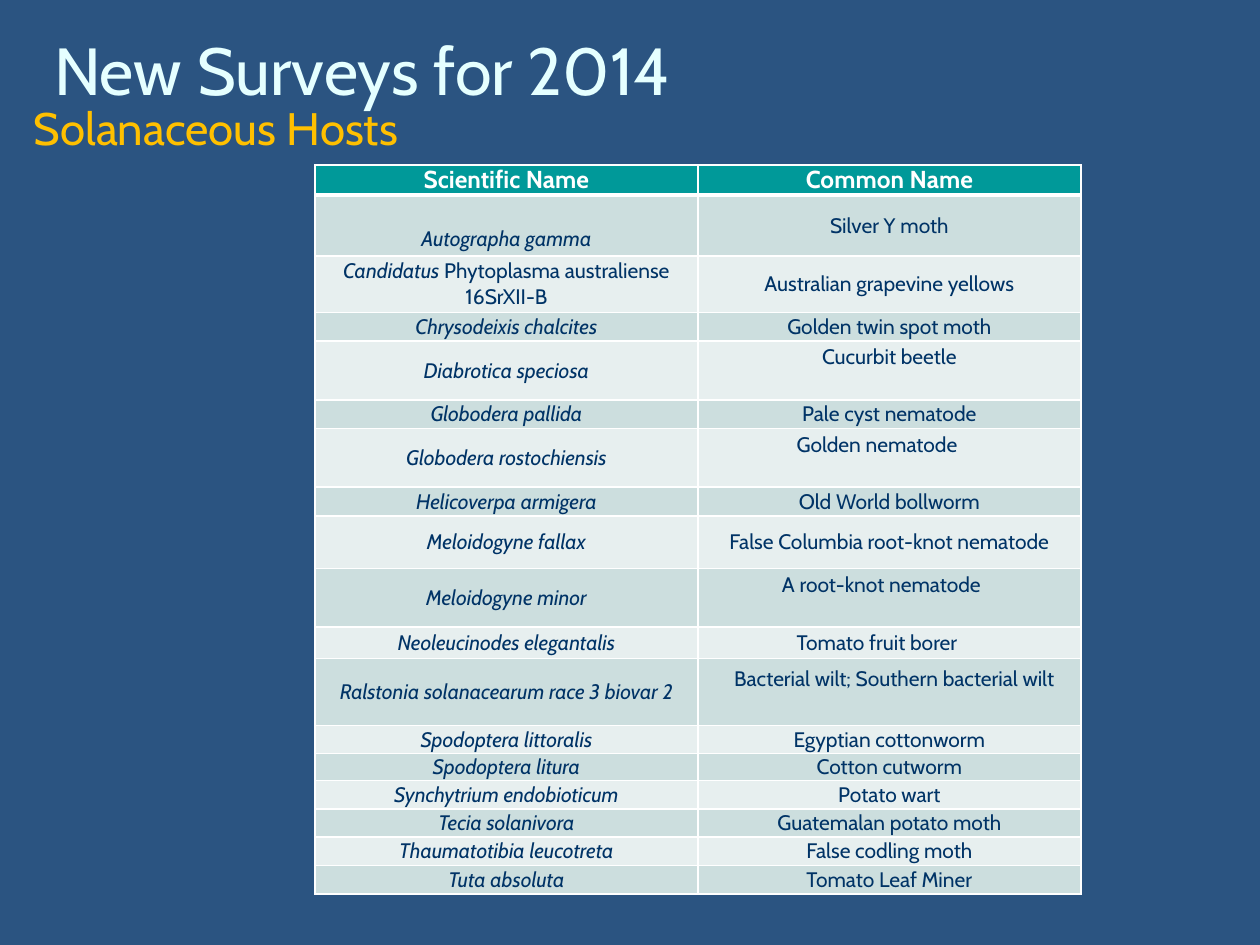
from dataclasses import dataclass

from lxml.etree import SubElement
from pptx import Presentation
from pptx.dml.color import RGBColor
from pptx.enum.text import MSO_ANCHOR, PP_ALIGN
from pptx.oxml.ns import qn
from pptx.util import Cm, Pt


@dataclass(frozen=True)
class Theme:
    font: str = "Cabin"
    background: str = "2B5481"
    title: str = "E5FFFF"
    subtitle: str = "FFC000"
    header: str = "009999"
    bands: tuple = ("CCDEDE", "E7EFEF")
    body: str = "003366"
    white: str = "FFFFFF"
    title_size: int = 38
    subtitle_size: int = 26
    header_size: int = 14
    body_size: int = 12
    rule: int = 1
    header_rule: int = 3


@dataclass(frozen=True)
class Pest:
    scientific: str
    common: str
    height: float
    plain: str = ""  # upright part after the italic name
    scientific_top: float = 0
    common_bottom: float = 0
    common_left: float = 0
    common_right: float = 0


LOWER = 0.53  # cell margin that moves text half a line

PESTS = [
    Pest("Autographa gamma", "Silver Y moth", 1.23, scientific_top=LOWER),
    Pest("Candidatus", "Australian grapevine yellows", 1.14,
         plain=" Phytoplasma australiense 16SrXII-B"),
    Pest("Chrysodeixis chalcites", "Golden twin spot moth", 0.58),
    Pest("Diabrotica speciosa", "Cucurbit beetle", 1.18, common_bottom=LOWER),
    Pest("Globodera pallida", "Pale cyst nematode", 0.58),
    Pest("Globodera rostochiensis", "Golden nematode", 1.18,
         common_bottom=LOWER, common_right=0.5),
    Pest("Helicoverpa armigera", "Old World bollworm", 0.58),
    Pest("Meloidogyne fallax", "False Columbia root-knot nematode", 1.06),
    Pest("Meloidogyne minor", "A root-knot nematode", 1.18,
         common_bottom=LOWER, common_right=0.32),
    Pest("Neoleucinodes elegantalis", "Tomato fruit borer", 0.64,
         common_right=0.5),
    Pest("Ralstonia solanacearum race 3 biovar 2",
         "Bacterial wilt; Southern bacterial wilt", 1.35,
         common_bottom=LOWER, common_left=0.2),
    Pest("Spodoptera littoralis", "Egyptian cottonworm", 0.56),
    Pest("Spodoptera litura", "Cotton cutworm", 0.55),
    Pest("Synchytrium endobioticum", "Potato wart", 0.57),
    Pest("Tecia solanivora", "Guatemalan potato moth", 0.57),
    Pest("Thaumatotibia leucotreta", "False codling moth", 0.57),
    Pest("Tuta absoluta", "Tomato Leaf Miner", 0.58),
]


class SlideBuilder:
    def __init__(self, page, theme):
        self.page = page
        self.theme = theme
        fill = page.background.fill
        fill.solid()
        fill.fore_color.rgb = RGBColor.from_string(theme.background)

    def style(self, font, size, color, bold=False):
        font.name = self.theme.font
        font.size = Pt(size)
        font.bold = bold
        font.color.rgb = RGBColor.from_string(color)

    def text(self, words, left, top, width, height, size, color,
             anchor=MSO_ANCHOR.TOP):
        box = self.page.shapes.add_textbox(
            Cm(left), Cm(top), Cm(width), Cm(height))
        frame = box.text_frame
        frame.word_wrap = True
        frame.vertical_anchor = anchor
        para = frame.paragraphs[0]
        para.text = words
        self.style(para.font, size, color)

    def borders(self, cell, top, bottom):
        properties = cell._tc.get_or_add_tcPr()
        rule = self.theme.rule
        for side, width in zip("LRTB", (rule, rule, top, bottom)):
            line = SubElement(properties, qn(f"a:ln{side}"), w=str(Pt(width)))
            solid = SubElement(line, qn("a:solidFill"))
            SubElement(solid, qn("a:srgbClr"), val=self.theme.white)

    def cell(self, cell, spans, fill, size, color, bold=False,
             margins=(0, 0, 0, 0), rules=(1, 1)):
        """Fill a cell; spans are (words, italic), margins left/top/right/bottom."""
        self.borders(cell, *rules)
        cell.fill.solid()
        cell.fill.fore_color.rgb = RGBColor.from_string(fill)
        cell.vertical_anchor = MSO_ANCHOR.MIDDLE
        (cell.margin_left, cell.margin_top,
         cell.margin_right, cell.margin_bottom) = map(Cm, margins)
        para = cell.text_frame.paragraphs[0]
        para.alignment = PP_ALIGN.CENTER
        self.style(para.font, size, color, bold)
        for words, italic in spans:
            span = para.add_run()
            span.text = words
            self.style(span.font, size, color, bold)
            span.font.italic = italic

    def pest_table(self, headings, pests, left, top, width, header_height):
        theme = self.theme
        heights = [header_height] + [pest.height for pest in pests]
        table = self.page.shapes.add_table(
            len(heights), len(headings), Cm(left), Cm(top),
            Cm(width), Cm(sum(heights))).table
        for row, height in zip(table.rows, heights):
            row.height = Cm(height)

        # Header row
        for column, heading in enumerate(headings):
            self.cell(table.cell(0, column), [(heading, False)], theme.header,
                      theme.header_size, theme.white, bold=True,
                      rules=(theme.rule, theme.header_rule))

        # Banded body rows
        for number, pest in enumerate(pests, start=1):
            fill = theme.bands[(number - 1) % 2]
            top_rule = theme.header_rule if number == 1 else theme.rule
            names = [(pest.scientific, True)]
            if pest.plain:
                names.append((pest.plain, False))
            columns = [
                (names, (0, pest.scientific_top, 0, 0)),
                ([(pest.common, False)],
                 (pest.common_left, 0, pest.common_right, pest.common_bottom)),
            ]
            for column, (spans, margins) in enumerate(columns):
                self.cell(table.cell(number, column), spans, fill,
                          theme.body_size, theme.body, margins=margins,
                          rules=(top_rule, theme.rule))


def main():
    deck = Presentation()
    deck.slide_width, deck.slide_height = Cm(25.4), Cm(19.05)
    theme = Theme()
    slide = SlideBuilder(deck.slides.add_slide(deck.slide_layouts[6]), theme)

    # Headings
    slide.text("New Surveys for 2014", 0.84, 0.25, 24.56, 2.26,
               theme.title_size, theme.title, MSO_ANCHOR.MIDDLE)
    slide.text("Solanaceous Hosts", 0.43, 1.9, 24.56, 1.37,
               theme.subtitle_size, theme.subtitle)

    # Survey targets
    slide.pest_table(["Scientific Name", "Common Name"], PESTS,
                     6.35, 3.33, 15.44, 0.6)

    deck.save("out.pptx")


if __name__ == "__main__":
    main()
